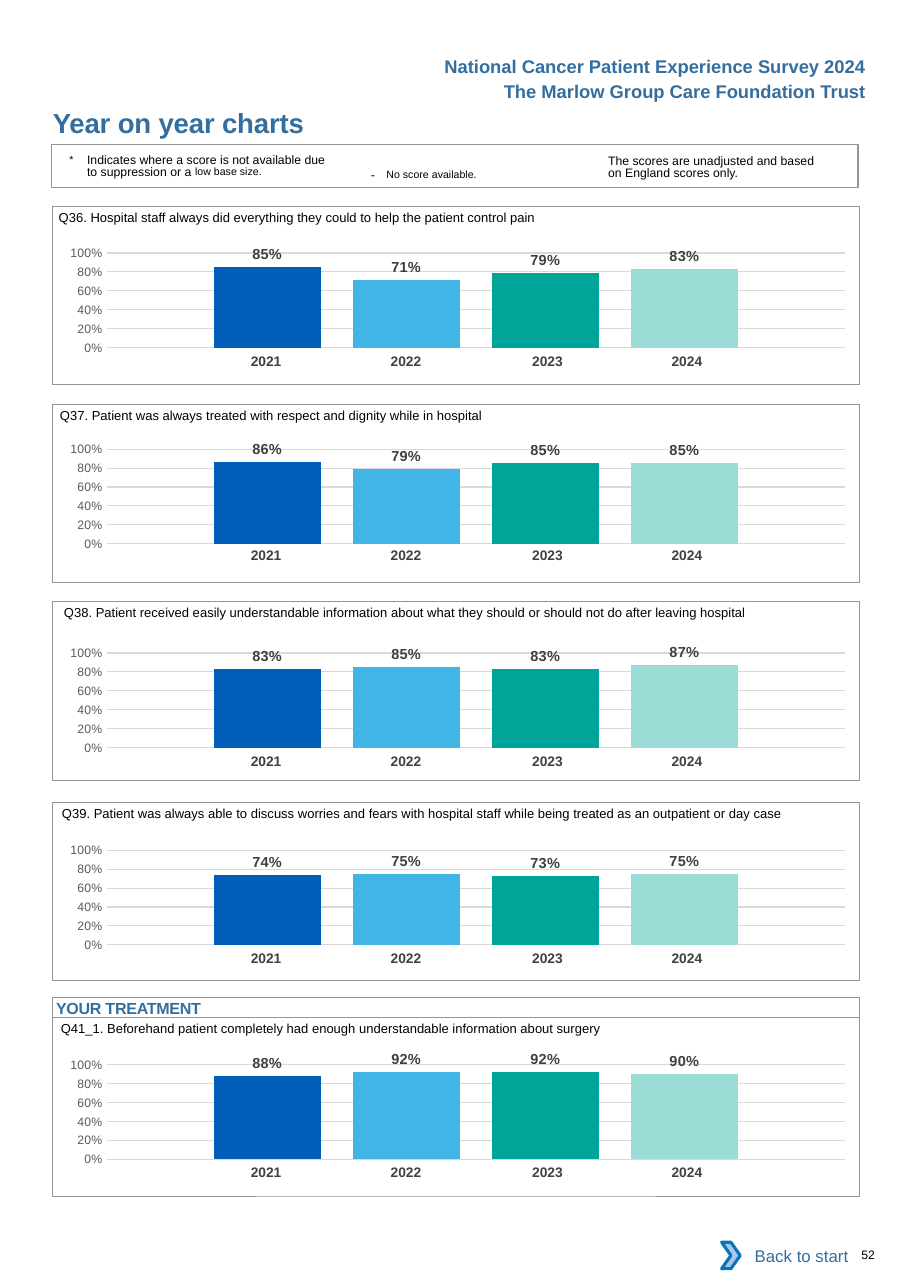
"""Build the year on year charts page of the patient survey report."""
from dataclasses import dataclass

from lxml.etree import SubElement as Sub
from pptx import Presentation
from pptx.chart.data import CategoryChartData as ChartData
from pptx.dml.color import RGBColor
from pptx.enum.chart import XL_CHART_TYPE as Kind, XL_LABEL_POSITION as Spot, XL_TICK_MARK as Tick
from pptx.enum.shapes import MSO_SHAPE as Form
from pptx.enum.text import MSO_ANCHOR as Anchor, MSO_AUTO_SIZE as Fit, PP_ALIGN as Align
from pptx.oxml import parse_xml
from pptx.oxml.ns import nsdecls, qn
from pptx.util import Pt

BLUE = RGBColor(0x33, 0x6E, 0x9F)
BLACK = RGBColor(0, 0, 0)
WHITE = RGBColor(0xFF, 0xFF, 0xFF)
FRAME = RGBColor(0x93, 0x95, 0x98)
GRID = RGBColor(0xD9, 0xD9, 0xD9)
SCALE = RGBColor(0x59, 0x59, 0x59)
VALUE = RGBColor(0x40, 0x40, 0x40)
YEAR = RGBColor(0x41, 0x40, 0x42)
ARROW = RGBColor(0xA8, 0xC7, 0xE9)
EDGE = RGBColor(0x0A, 0x74, 0xBB)
BARS = (RGBColor(0x00, 0x5E, 0xB8), RGBColor(0x41, 0xB6, 0xE6),
        RGBColor(0x00, 0xA4, 0x99), RGBColor(0x9C, 0xDC, 0xD7))
YEARS = ("2021", "2022", "2023", "2024")
WIDTHS = (91.4, 91.4, 96.5, 91.4)
INSETS = (0, 0, 2.9, 8.6)
PLOT = {"x": 0.079, "y": 0.145, "w": 0.915, "h": 0.666}
NO_STYLE = "{2D5ABB26-0587-4C30-8999-92F81FD0307C}"
LEFT, WIDE, TALL = 34.4, 527, 116.6


@dataclass
class Run:
    text: str
    size: float = 8
    color: RGBColor = BLACK
    bold: bool = False
    raised: int = 0
    space: int = 0


@dataclass
class Box:
    left: float
    top: float
    width: float
    height: float


@dataclass
class Panel:
    title: str
    indent: float
    frame: float
    chart: float
    years: float
    scores: tuple[float, ...]


PANELS = (
    Panel("Q36. Hospital staff always did everything they could to help the patient control pain",
          38.4, 134.6, 151.9, 227.5, (0.85, 0.71, 0.79, 0.83)),
    Panel("Q37. Patient was always treated with respect and dignity while in hospital",
          39.2, 264.2, 280.1, 354.2, (0.86, 0.79, 0.85, 0.85)),
    Panel("Q38. Patient received easily understandable information about what they should "
          "or should not do after leaving hospital",
          41.8, 393.1, 413.3, 488.9, (0.83, 0.85, 0.83, 0.87)),
    Panel("Q39. Patient was always able to discuss worries and fears with hospital staff "
          "while being treated as an outpatient or day case",
          40.5, 524.2, 542.2, 617.8, (0.74, 0.75, 0.73, 0.75)),
    Panel("Q41_1. Beforehand patient completely had enough understandable information about surgery",
          39.8, 665, 682.3, 757.9, (0.88, 0.92, 0.92, 0.9)),
)


def place(box: Box) -> tuple[Pt, ...]:
    """Give the box as lengths."""
    return Pt(box.left), Pt(box.top), Pt(box.width), Pt(box.height)


def style(font, size: float, color: RGBColor, bold: bool = False) -> None:
    """Set face, size, colour and weight."""
    font.name, font.size, font.bold = "Arial", Pt(size), bold
    font.color.rgb = color


def write(frame, runs: tuple[Run, ...], align=Align.LEFT, inset=(0, 0, 0, 0), wrap=True):
    """Fill a text frame run by run and return its paragraph."""
    frame.word_wrap, frame.auto_size = wrap, Fit.NONE
    frame.margin_left, frame.margin_top, frame.margin_right, frame.margin_bottom = map(Pt, inset)
    para = frame.paragraphs[0]
    para.alignment = align
    for part in runs:
        run = para.add_run()
        run.text = part.text
        style(run.font, part.size, part.color, part.bold)
        props = run._r.get_or_add_rPr()
        if part.raised:
            props.set("baseline", str(part.raised * 1000))
        if part.space:
            props.set("spc", str(part.space))
    return para


def label(shapes, box: Box, *runs: Run, **look):
    """Add a text box and return its paragraph."""
    frame = shapes.add_textbox(*place(box)).text_frame
    frame.vertical_anchor = Anchor.TOP
    return write(frame, runs, **look)


def block(shapes, box: Box, form=Form.RECTANGLE, fill=None, line=FRAME, weight: float = 0.5):
    """Add a plain preset shape."""
    shape = shapes.add_shape(form, *place(box))
    shape.shadow.inherit = False
    if fill is None:
        shape.fill.background()
    else:
        shape.fill.solid()
        shape.fill.fore_color.rgb = fill
    if line is None:
        shape.line.fill.background()
    else:
        shape.line.color.rgb, shape.line.width = line, Pt(weight)
    return shape


def add_years(shapes, top: float) -> None:
    """Add the row of years below the bars."""
    holder = shapes.add_table(1, len(YEARS), *place(Box(124.6, top, sum(WIDTHS), 19.4)))
    next(holder._element.iter(qn("a:tableStyleId"))).text = NO_STYLE
    table = holder.table
    table.first_row = table.horz_banding = False
    for index, (year, width, inset) in enumerate(zip(YEARS, WIDTHS, INSETS)):
        table.columns[index].width = Pt(width)
        cell = table.cell(0, index)
        cell.fill.background()
        cell.margin_left, cell.margin_right = Pt(7.2), Pt(inset)
        cell.margin_top = cell.margin_bottom = Pt(3.6)
        para = cell.text_frame.paragraphs[0]
        para.alignment = Align.CENTER
        run = para.add_run()
        run.text = year
        style(run.font, 9, YEAR, True)


def add_bars(shapes, top: float, scores: tuple[float, ...]) -> None:
    """Add the column chart with one series a year."""
    data = ChartData(number_format="0%")
    data.categories = ["1"]
    for index, score in enumerate(scores, 1):
        data.add_series(f"Series {index}", [score])
    box = Box(28.3, top, WIDE, 92.9)
    chart = shapes.add_chart(Kind.COLUMN_CLUSTERED, *place(box), data).chart
    chart.has_legend = chart.has_title = False
    chart.font.name, chart.font.size = "Calibri", Pt(10)
    chart.font.color.rgb = BLACK
    chart.category_axis.visible = False
    axis = chart.value_axis
    axis.minimum_scale, axis.maximum_scale, axis.major_unit = 0, 1, 0.2
    axis.major_tick_mark = axis.minor_tick_mark = Tick.NONE
    axis.format.line.fill.background()
    axis.major_gridlines.format.line.color.rgb = GRID
    axis.major_gridlines.format.line.width = Pt(0.75)
    ticks = axis.tick_labels
    ticks.number_format, ticks.number_format_is_linked = "0%", False
    style(ticks.font, 8, SCALE)
    plot = chart.plots[0]
    plot.gap_width, plot.overlap, plot.vary_by_categories = 200, -30, False
    for series, color in zip(plot.series, BARS):
        series.format.fill.solid()
        series.format.fill.fore_color.rgb = color
        tags = series.data_labels
        tags.show_value, tags.position = True, Spot.OUTSIDE_END
        tags.number_format, tags.number_format_is_linked = "0%", False
        style(tags.font, 9.5, VALUE, True)
    root = chart.element
    root.find(qn("c:chart")).addnext(parse_xml(
        f'<c:spPr {nsdecls("c", "a")}><a:noFill/><a:ln><a:noFill/></a:ln></c:spPr>'))
    area = next(root.iter(qn("c:plotArea")))
    for old in area.findall(qn("c:layout")):
        area.remove(old)
    layout = parse_xml(f'<c:layout {nsdecls("c")}><c:manualLayout/></c:layout>')
    area.insert(0, layout)
    pairs = [("layoutTarget", "inner"), ("xMode", "edge"), ("yMode", "edge"), *PLOT.items()]
    for name, value in pairs:
        Sub(layout[0], qn(f"c:{name}")).set("val", str(value))


def add_key(shapes) -> None:
    """Add the framed notes on the scores."""
    group = shapes.add_group_shape().shapes
    note = label(group, Box(397.4, 99.4, 142, 19.4), Run("The scores are unadjusted and based on England scores only."),
                 inset=(0, 2.2, 0, 0))
    label(group, Box(235.4, 101.5, 131.8, 17.3), Run("- ", space=260),
          Run("No score available.", 12, raised=3), inset=(7.2, 3.6, 7.2, 3.6))
    star = label(group, Box(45.4, 99.4, 172, 19.4), Run("*\t", 12, raised=3),
                 Run("Indicates where a score is not available due to suppression or a "),
                 Run("low base size.", 12, raised=7), inset=(0, 2.2, 0, 0))
    props = star._p.get_or_add_pPr()
    props.set("marL", str(Pt(11.5)))
    props.set("indent", str(Pt(-11.5)))
    note.line_spacing = star.line_spacing = Pt(8.1)
    block(group, Box(33.8, 94.3, WIDE, 28.1), weight=0.75)


def main() -> None:
    """Draw the page and save it."""
    deck = Presentation()
    deck.slide_width, deck.slide_height = Pt(594.72), Pt(841.68)
    slide = deck.slides.add_slide(deck.slide_layouts[5])
    shapes = slide.shapes
    title = shapes.title
    title.left, title.top, title.width, title.height = place(Box(33.8, 69.1, 324, 21.6))
    title.text_frame.vertical_anchor = Anchor.TOP
    write(title.text_frame, (Run("Year on year charts", 18, BLUE, True, space=-10),), inset=(0.7, 0, 0, 0))
    heads = ("National Cancer Patient Experience Survey 2024", "The Marlow Group Care Foundation Trust")
    for index, head in enumerate(heads):
        label(shapes, Box(273, 32.8 + 16 * index, 300, 21.6), Run(head, 12, BLUE, True),
              align=Align.RIGHT, inset=(7.2, 3.6, 7.2, 3.6), wrap=False)
    add_key(shapes)
    for panel in PANELS:
        add_years(shapes, panel.years)
        add_bars(shapes, panel.chart, panel.scores)
        block(shapes, Box(LEFT, panel.frame, WIDE, TALL))
        label(shapes, Box(panel.indent, panel.frame - 4.5, 520, 17.3), Run(panel.title, 8.5),
              inset=(0, 6.5, 0, 0))
    part = block(shapes, Box(LEFT, 652, WIDE, 13)).text_frame
    part.vertical_anchor = Anchor.TOP
    write(part, (Run("YOUR TREATMENT", 10.5, BLUE, True, space=-15),), inset=(2.2, 0.7, 0, 0))
    back = shapes.add_group_shape().shapes
    link = block(back, Box(476.6, 805.3, 85, 30.2), fill=WHITE, line=None).text_frame
    link.vertical_anchor = Anchor.MIDDLE
    write(link, (Run("Back to start", 11, BLUE),), Align.RIGHT, (7.2, 3.6, 7.2, 3.6))
    block(back, Box(471.6, 811.8, 12.2, 17.3), Form.CHEVRON, ARROW, EDGE, 2)
    label(shapes, Box(555.8, 815.4, 36.7, 9.4), Run("52"), inset=(7.2, 0, 0, 0))
    deck.save("out.pptx")


if __name__ == "__main__":
    main()
